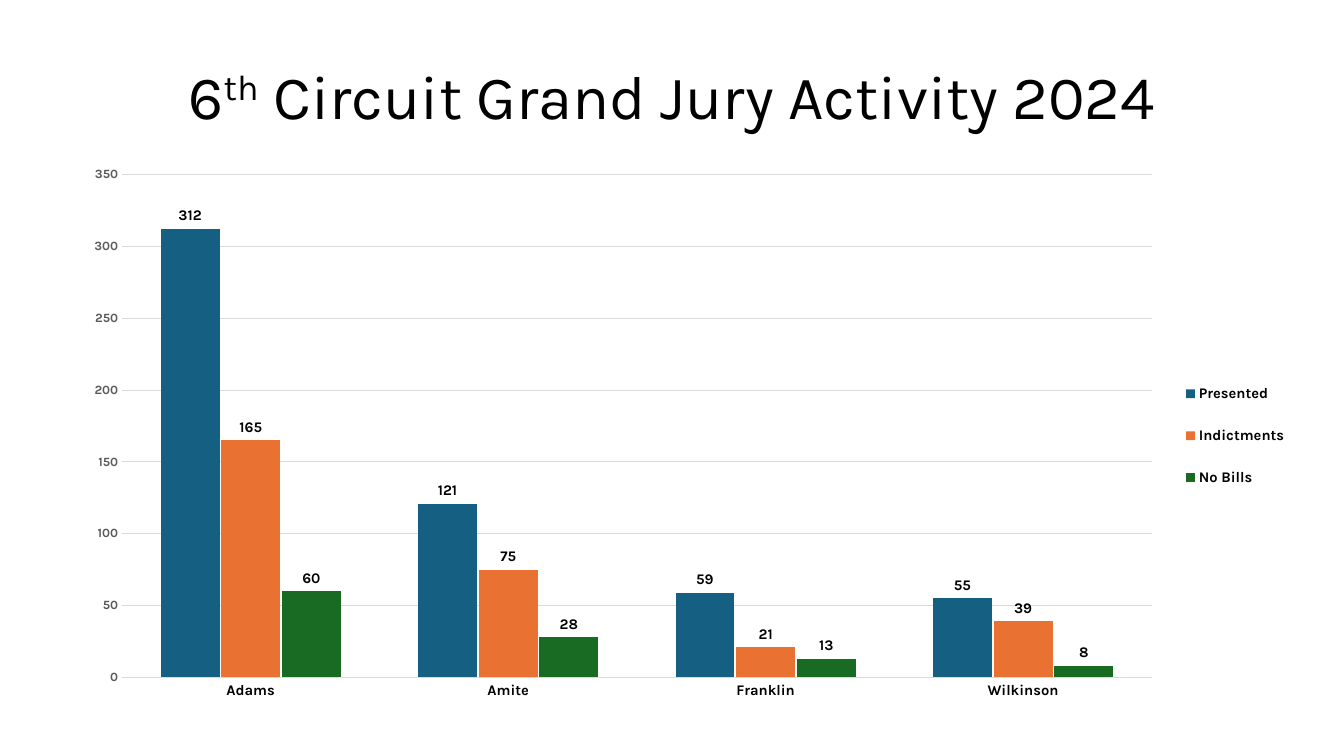
from lxml.etree import SubElement
from pptx import Presentation
from pptx.chart.data import CategoryChartData
from pptx.dml.color import RGBColor
from pptx.enum.chart import XL_CHART_TYPE, XL_LABEL_POSITION, XL_LEGEND_POSITION, XL_TICK_MARK
from pptx.enum.text import MSO_ANCHOR, PP_ALIGN
from pptx.oxml import parse_xml
from pptx.oxml.ns import qn
from pptx.util import Emu, Pt

EMU_PER_PX = 9144  # 100 px to the inch
FONT = "Karla"
COLORS = {
    "text": "000000",
    "scale": "595959",
    "grid": "D9D9D9",
    "Presented": "156082",
    "Indictments": "E97132",
    "No Bills": "196B24",
}
COUNTIES = ["Adams", "Amite", "Franklin", "Wilkinson"]
ACTIVITY = {
    "Presented": [312, 121, 59, 55],
    "Indictments": [165, 75, 21, 39],
    "No Bills": [60, 28, 13, 8],
}


def px(*lengths):
    return [Emu(length * EMU_PER_PX) for length in lengths]


def color(name):
    return RGBColor.from_string(COLORS[name])


def format_font(font, size, color_name="text", bold=False):
    font.name = FONT
    font.size = Pt(size)
    font.bold = bold
    font.color.rgb = color(color_name)


def format_line(line, color_name):
    line.color.rgb = color(color_name)
    line.width = Pt(0.75)


def add_text(slide, box, runs, size, align, anchor, line_spacing):
    """Add one paragraph; runs holds pairs of text and baseline shift."""
    frame = slide.shapes.add_textbox(*px(*box)).text_frame
    frame.word_wrap = True
    frame.vertical_anchor = anchor
    paragraph = frame.paragraphs[0]
    paragraph.alignment = align
    paragraph.line_spacing = line_spacing
    for text, baseline in runs:
        run = paragraph.add_run()
        run.text = text
        format_font(run.font, size)
        if baseline:
            run.font._element.set("baseline", str(baseline * 1000))


def make_layout(inner=False, **fractions):
    """Return a manual layout given as fractions of the chart area."""
    layout = parse_xml(
        '<c:layout xmlns:c="http://schemas.openxmlformats.org/drawingml/2006/chart"/>'
    )
    manual = SubElement(layout, qn("c:manualLayout"))
    settings = {"layoutTarget": "inner"} if inner else {}
    settings.update(xMode="edge", yMode="edge", **fractions)
    for tag, value in settings.items():
        SubElement(manual, qn(f"c:{tag}")).set("val", str(value))
    return layout


def drop_layout(element):
    for layout in element.findall(qn("c:layout")):
        element.remove(layout)


def format_axes(chart):
    category_axis, value_axis = chart.category_axis, chart.value_axis
    for axis in (category_axis, value_axis):
        axis.major_tick_mark = axis.minor_tick_mark = XL_TICK_MARK.NONE
    format_font(category_axis.tick_labels.font, 10.5, bold=True)
    format_line(category_axis.format.line, "grid")
    format_font(value_axis.tick_labels.font, 9, "scale", bold=True)
    value_axis.format.line.fill.background()
    value_axis.minimum_scale, value_axis.maximum_scale = 0, 350
    value_axis.major_unit = 50
    value_axis.has_major_gridlines = True
    format_line(value_axis.major_gridlines.format.line, "grid")


def format_columns(plot):
    plot.gap_width, plot.overlap = 131, -3
    plot.vary_by_categories = False
    for series in plot.series:
        series.format.fill.solid()
        series.format.fill.fore_color.rgb = color(series.name)
        labels = series.data_labels
        labels.show_value = True
        labels.position = XL_LABEL_POSITION.OUTSIDE_END
        format_font(labels.font, 10.5, bold=True)


def format_legend(chart):
    chart.has_legend = True
    legend = chart.legend
    legend.position = XL_LEGEND_POSITION.RIGHT
    legend.include_in_layout = False
    format_font(legend.font, 10.5, bold=True)
    element = legend._element
    drop_layout(element)
    element.find(qn("c:overlay")).addprevious(make_layout(x=0.9, y=0.37, w=0.1, h=0.27))


def add_column_chart(slide, box):
    data = CategoryChartData()
    data.categories = COUNTIES
    for name, values in ACTIVITY.items():
        data.add_series(name, values)
    chart = slide.shapes.add_chart(XL_CHART_TYPE.COLUMN_CLUSTERED, *px(*box), data).chart
    chart.has_title = False
    format_font(chart.font, 10)
    format_axes(chart)
    format_columns(chart.plots[0])
    format_legend(chart)
    plot_area = chart._chartSpace.find(f".//{qn('c:plotArea')}")
    drop_layout(plot_area)
    plot_area.insert(0, make_layout(inner=True, x=0.042, y=0.033, w=0.84, h=0.909))


def main():
    presentation = Presentation()
    presentation.slide_width, presentation.slide_height = px(1333, 750)
    slide = presentation.slides.add_slide(presentation.slide_layouts[6])

    # Title
    add_text(
        slide, (92, 26, 1150, 145),
        [("6", 0), ("th", 30), (" Circuit Grand Jury Activity 2024", 0)],
        size=44, align=PP_ALIGN.CENTER, anchor=MSO_ANCHOR.MIDDLE, line_spacing=0.9,
    )

    # Cases by county
    add_column_chart(slide, (70, 155, 1216, 549))

    presentation.save("out.pptx")


if __name__ == "__main__":
    main()
